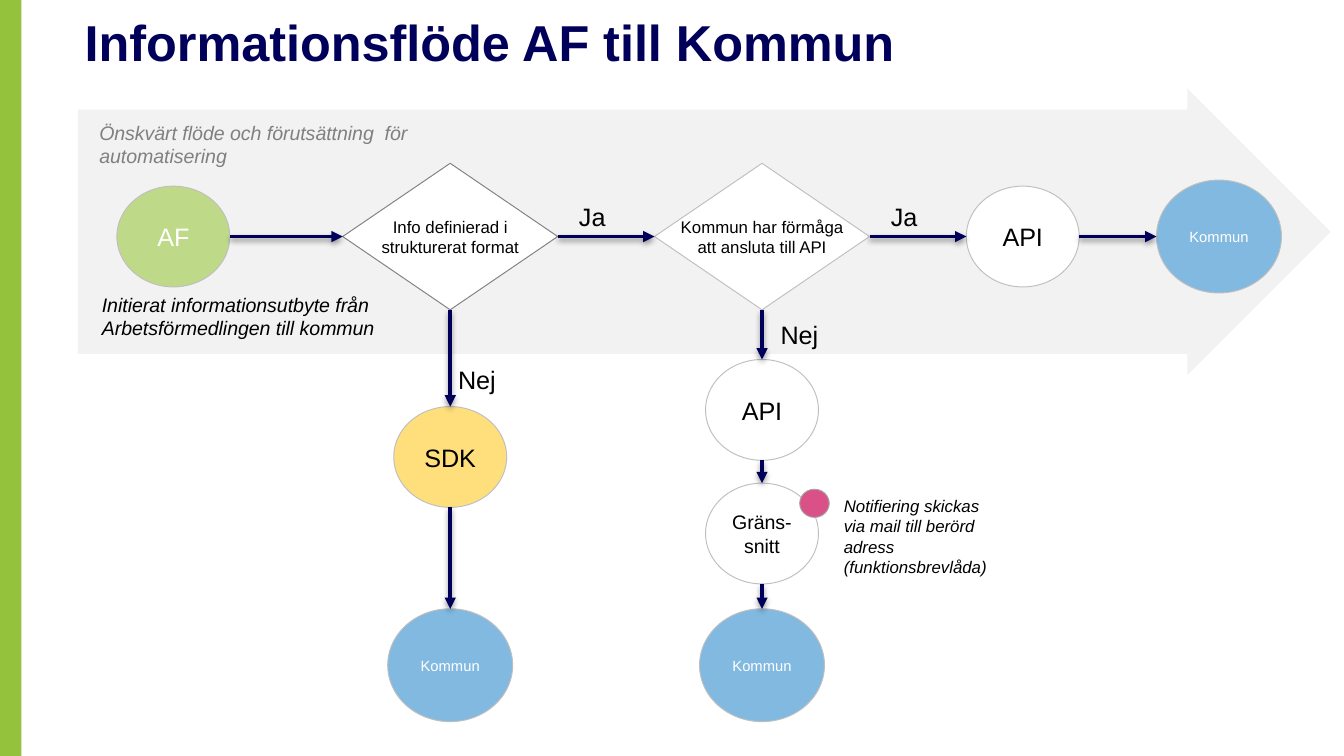
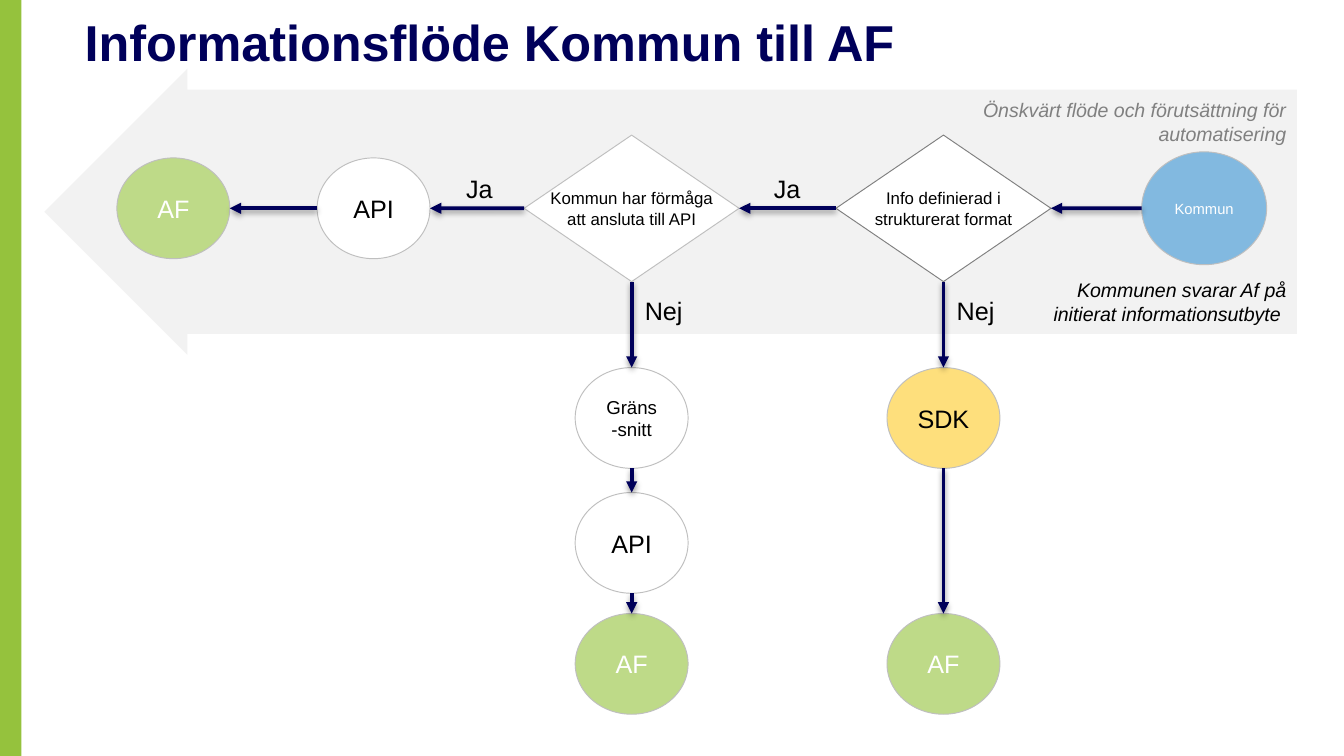
from lxml.etree import SubElement
from pptx import Presentation
from pptx.dml.color import RGBColor
from pptx.enum.shapes import MSO_CONNECTOR, MSO_SHAPE
from pptx.enum.text import MSO_ANCHOR, MSO_AUTO_SIZE, PP_ALIGN
from pptx.oxml.ns import qn
from pptx.util import Inches, Pt

FONT = "Arial"
COLORS = {
    "white": "FFFFFF", "black": "000000", "navy": "00005A", "lime": "95C23D",
    "band": "F2F2F2", "gray": "808080", "outline": "BFBFBF", "dot_outline": "A6A6A6",
    "green": "BEDA88", "blue": "82B9E0", "yellow": "FEDF7C", "pink": "DA5187",
}
# kind: text, fill, text colour, text size, width, height
CIRCLES = {
    "AF": ("AF", "green", "white", 13.5, 0.84, 0.75),
    "API": ("API", "white", "black", 13.5, 0.84, 0.75),
    "SDK": ("SDK", "yellow", "black", 13.5, 0.84, 0.75),
    "Kommun": ("Kommun", "blue", "white", 7.9, 0.93, 0.84),
    "Gräns-": ("Gräns-\vsnitt", "white", "black", 10.5, 0.84, 0.75),
    "Gräns": ("Gräns-snitt", "white", "black", 10, 0.84, 0.75),
}
DECISION_SIZE = (1.6, 1.09)
FORMAT_QUESTION = "Info definierad i\vstrukturerat format"
API_QUESTION = "Kommun har förmåga\vatt ansluta till API"
TOP, LEFT, BOTTOM, RIGHT = range(4)


def color(name):
    return RGBColor.from_string(COLORS[name])


def write(shape, text, size, ink="black", align=PP_ALIGN.LEFT, bold=False, italic=False):
    frame = shape.text_frame
    frame.text = text
    frame.word_wrap = "\v" not in text
    for paragraph in frame.paragraphs:
        paragraph.alignment = align
        for span in paragraph.runs:
            font = span.font
            font.name, font.size = FONT, Pt(size)
            font.bold, font.italic = bold, italic
            font.color.rgb = color(ink)
    return frame


def add_figure(page, preset, left, top, width, height, fill, line=None):
    shape = page.shapes.add_shape(
        preset, Inches(left), Inches(top), Inches(width), Inches(height))
    shape.shadow.inherit = False
    shape.fill.solid()
    shape.fill.fore_color.rgb = color(fill)
    if line:
        shape.line.color.rgb = color(line)
        shape.line.width = Pt(0.5)
    else:
        shape.line.fill.background()
    return shape


def add_node(page, preset, x, y, width, height, fill, line, text, size, ink):
    """Place a labelled figure by its centre."""
    node = add_figure(page, preset, x - width / 2, y - height / 2, width, height, fill, line)
    frame = write(node, text, size, ink, PP_ALIGN.CENTER)
    frame.vertical_anchor = MSO_ANCHOR.MIDDLE
    return node


def add_circle(page, kind, x, y):
    text, fill, ink, size, width, height = CIRCLES[kind]
    return add_node(page, MSO_SHAPE.FLOWCHART_CONNECTOR, x, y, width, height,
                    fill, "outline", text, size, ink)


def add_decision(page, text, x, y, line="outline"):
    return add_node(page, MSO_SHAPE.FLOWCHART_DECISION, x, y, *DECISION_SIZE,
                    "white", line, text, 9, "black")


def add_text(page, text, left, top, width, height, size, **style):
    box = page.shapes.add_textbox(Inches(left), Inches(top), Inches(width), Inches(height))
    frame = write(box, text, size, **style)
    frame.auto_size = MSO_AUTO_SIZE.SHAPE_TO_FIT_TEXT
    return frame


def add_answer(page, text, left, top, width):
    add_text(page, text, left, top, width, 0.33, 13.5)


def side_point(node, side):
    x = {LEFT: node.left, RIGHT: node.left + node.width}.get(side, node.left + node.width // 2)
    y = {TOP: node.top, BOTTOM: node.top + node.height}.get(side, node.top + node.height // 2)
    return x, y


def style_arrow(arrow):
    arrow.line.color.rgb = color("navy")
    arrow.line.width = Pt(2)
    SubElement(arrow.line._get_or_add_ln(), qn("a:tailEnd"), type="triangle")
    effects = SubElement(arrow._element.spPr, qn("a:effectLst"))
    shadow = SubElement(effects, qn("a:outerShdw"), blurRad=str(Pt(3.1)), dist=str(Pt(1.6)),
                        dir="5400000", rotWithShape="0")
    black = SubElement(shadow, qn("a:srgbClr"), val=COLORS["black"])
    SubElement(black, qn("a:alpha"), val="38000")


def link_chain(page, nodes, leaving, entering):
    """Join each node to the next; only decisions have a glue point for every side."""
    for start, end in zip(nodes, nodes[1:]):
        arrow = page.shapes.add_connector(
            MSO_CONNECTOR.STRAIGHT, *side_point(start, leaving), *side_point(end, entering))
        if start.auto_shape_type == MSO_SHAPE.FLOWCHART_DECISION:
            arrow.begin_connect(start, leaving)
        if end.auto_shape_type == MSO_SHAPE.FLOWCHART_DECISION:
            arrow.end_connect(end, entering)
        style_arrow(arrow)


def add_column(page, decision, x, stops):
    """Hang circles, given as (kind, centre height), below a decision."""
    circles = [add_circle(page, kind, x, y) for kind, y in stops]
    link_chain(page, [decision, *circles], BOTTOM, TOP)


def add_page(deck, title, band_left, band_top, band_rotation=0):
    page = deck.slides.add_slide(deck.slide_layouts[6])
    add_figure(page, MSO_SHAPE.RECTANGLE, 0, 0, 0.16, 5.63, "lime")
    band = add_figure(page, MSO_SHAPE.RIGHT_ARROW, band_left, band_top, 9.32, 2.13, "band")
    band.adjustments[0], band.adjustments[1] = 0.853, 0.5
    band.rotation = band_rotation
    frame = add_text(page, title, 0.63, 0.17, 8.12, 0.74, 27, ink="navy", bold=True)
    frame.auto_size = MSO_AUTO_SIZE.NONE
    frame.margin_left = frame.margin_top = frame.margin_right = frame.margin_bottom = 0
    frame.paragraphs[0].line_spacing = 0.8
    return page


def build_agency_to_municipality(deck):
    page = add_page(deck, "Informationsflöde AF till Kommun", 0.58, 0.66)
    add_text(page, "Önskvärt flöde och förutsättning  för automatisering",
             0.64, 0.85, 3.11, 0.45, 10.5, ink="gray", italic=True)
    add_text(page, "Initierat informationsutbyte från Arbetsförmedlingen till kommun",
             0.66, 2.13, 2.33, 0.45, 10.5, italic=True)

    flow_y, format_x, api_x = 1.76, 3.35, 5.67
    format_check = add_decision(page, FORMAT_QUESTION, format_x, flow_y, "gray")
    api_check = add_decision(page, API_QUESTION, api_x, flow_y)
    flow = [add_circle(page, "AF", 1.29, flow_y), format_check, api_check,
            add_circle(page, "API", 7.61, flow_y), add_circle(page, "Kommun", 9.07, flow_y)]
    link_chain(page, flow, RIGHT, LEFT)
    add_column(page, format_check, format_x, [("SDK", 3.4), ("Kommun", 4.95)])
    add_column(page, api_check, api_x, [("API", 3.05), ("Gräns-", 3.97), ("Kommun", 4.95)])

    add_answer(page, "Ja", 4.21, 1.45, 0.46)
    add_answer(page, "Ja", 6.53, 1.45, 0.46)
    add_answer(page, "Nej", 3.31, 2.66, 0.5)
    add_answer(page, "Nej", 5.71, 2.33, 0.51)
    add_figure(page, MSO_SHAPE.OVAL, 5.95, 3.64, 0.22, 0.21, "pink", "dot_outline")
    add_text(page, "Notifiering skickas via mail till berörd adress (funktionsbrevlåda)",
             6.18, 3.64, 1.32, 0.71, 9, italic=True)


def build_municipality_to_agency(deck):
    page = add_page(deck, "Informationsflöde Kommun till AF", 0.33, 0.51, 180)
    add_text(page, "Önskvärt flöde och förutsättning för automatisering",
             6.56, 0.68, 3.11, 0.45, 10.5, ink="gray", align=PP_ALIGN.RIGHT, italic=True)
    add_text(page, "Kommunen svarar Af på initierat informationsutbyte ",
             7.58, 2.02, 2.09, 0.45, 10.5, align=PP_ALIGN.RIGHT, italic=True)

    flow_y, format_x, api_x = 1.55, 7.02, 4.7
    format_check = add_decision(page, FORMAT_QUESTION, format_x, flow_y, "gray")
    api_check = add_decision(page, API_QUESTION, api_x, flow_y)
    flow = [add_circle(page, "Kommun", 8.96, flow_y), format_check, api_check,
            add_circle(page, "API", 2.78, flow_y), add_circle(page, "AF", 1.29, flow_y)]
    link_chain(page, flow, LEFT, RIGHT)
    add_column(page, format_check, format_x, [("SDK", 3.11), ("AF", 4.94)])
    add_column(page, api_check, api_x, [("Gräns", 3.11), ("API", 4.04), ("AF", 4.94)])

    add_answer(page, "Ja", 3.37, 1.24, 0.46)
    add_answer(page, "Ja", 5.66, 1.24, 0.46)
    add_answer(page, "Nej", format_x, 2.15, 0.55)
    add_answer(page, "Nej", api_x, 2.15, 0.63)


def main():
    deck = Presentation()
    deck.slide_width = Inches(10)
    deck.slide_height = deck.slide_width * 9 // 16
    build_agency_to_municipality(deck)
    build_municipality_to_agency(deck)
    deck.save("out.pptx")


if __name__ == "__main__":
    main()
